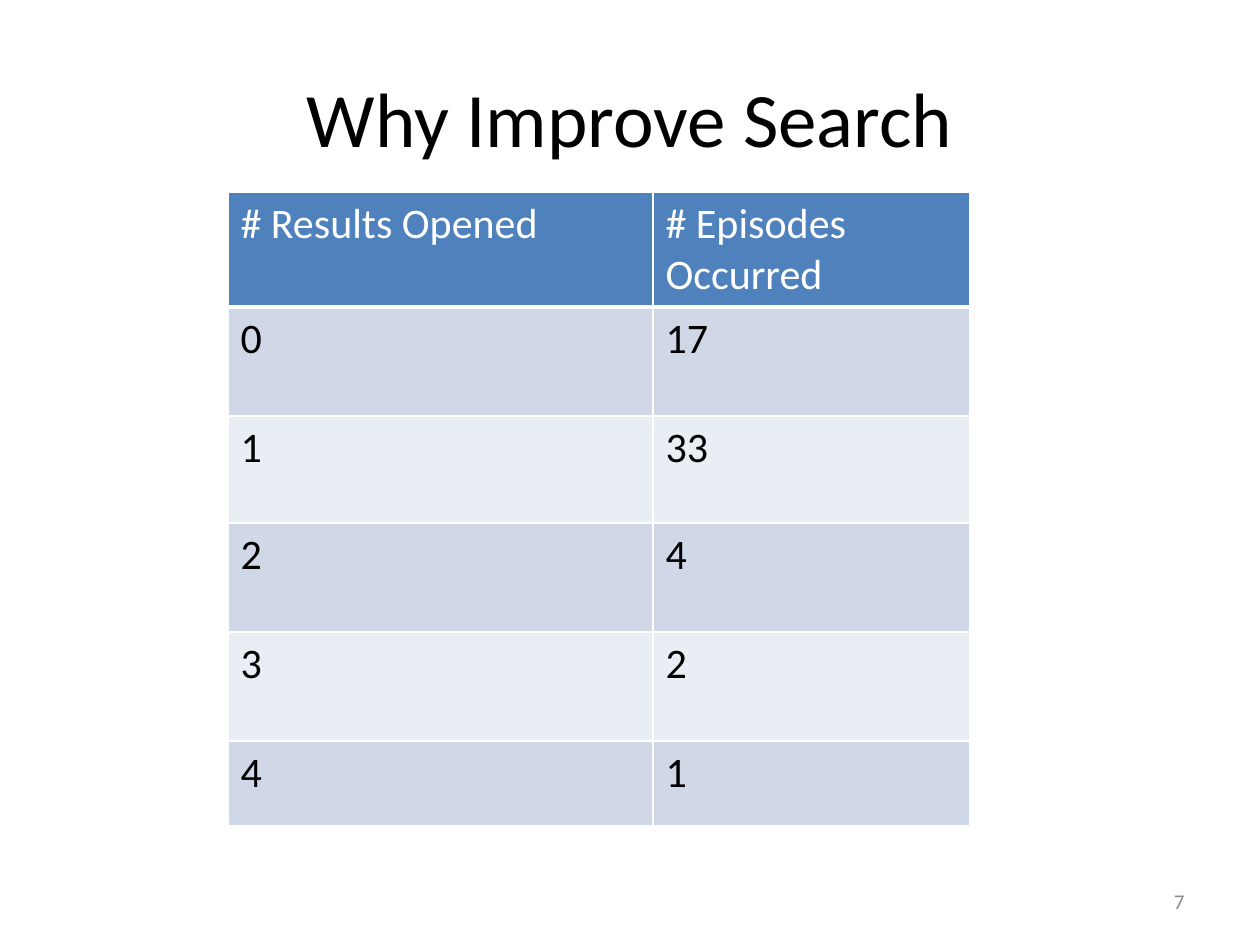
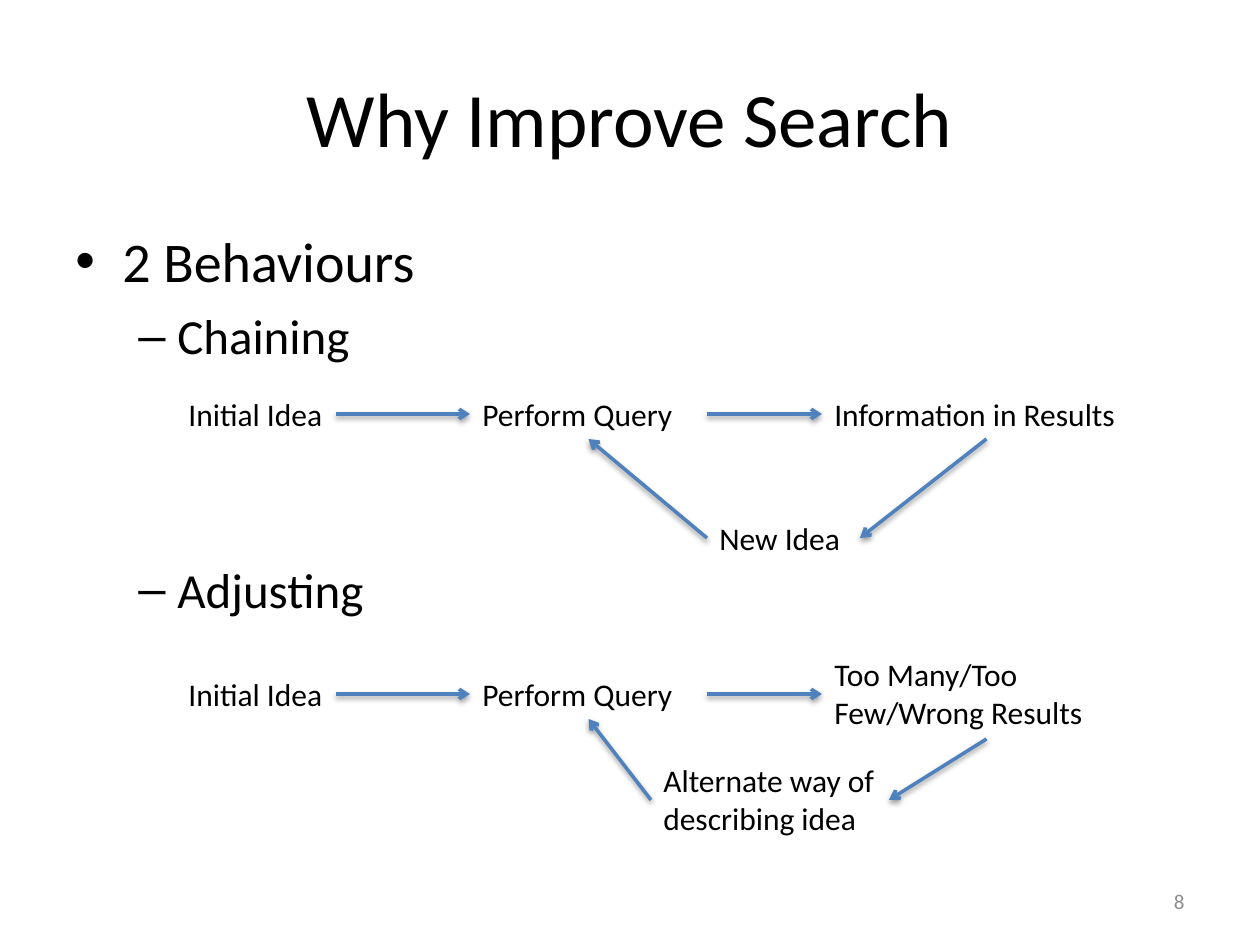
from lxml.etree import SubElement
from pptx import Presentation
from pptx.dml.color import RGBColor
from pptx.enum.shapes import MSO_CONNECTOR
from pptx.enum.text import MSO_ANCHOR, PP_ALIGN
from pptx.oxml.ns import qn
from pptx.util import Emu, Pt

FONT = "Calibri"
COLORS = {"text": "000000", "accent": "4F81BD", "white": "FFFFFF",
          "number": "8C8C8C", "dark_band": "D0D8E8", "light_band": "E9EDF4"}
TITLE_BOX = (63, 38, 1134, 157)
NUMBER_BOX = (903, 876, 294, 50)
TOP, LEFT, BOTTOM, RIGHT = range(4)
EPISODES = [("# Results Opened", "# Episodes Occurred"),
            ("0", "17"), ("1", "33"), ("2", "4"), ("3", "2"), ("4", "1")]


def px(n):
    """Turn pixels at 126 to the inch into EMU."""
    return Emu(round(n * 914400 / 126))


def rgb(name):
    """Look up a palette colour."""
    return RGBColor.from_string(COLORS[name])


def add_run(p, text, size, color="text"):
    """Add one styled run to a paragraph."""
    r = p.add_run()
    r.text = text
    r.font.name, r.font.size = FONT, Pt(size)
    r.font.color.rgb = rgb(color)


def add_box(s, box, anchor=MSO_ANCHOR.TOP):
    """Add an empty wrapping text box."""
    sp = s.shapes.add_textbox(*map(px, box))
    sp.text_frame.word_wrap = True
    sp.text_frame.vertical_anchor = anchor
    return sp


def add_line(s, box, text, size, color="text", align=PP_ALIGN.LEFT,
             anchor=MSO_ANCHOR.TOP):
    """Add a text box holding one paragraph."""
    sp = add_box(s, box, anchor)
    p = sp.text_frame.paragraphs[0]
    p.alignment = align
    add_run(p, text, size, color)
    return sp


def new_slide(prs, title, number):
    """Add a slide with the shared title and page number."""
    s = prs.slides.add_slide(prs.slide_layouts[6])
    add_line(s, TITLE_BOX, title, 44, align=PP_ALIGN.CENTER,
             anchor=MSO_ANCHOR.MIDDLE)
    add_line(s, NUMBER_BOX, str(number), 12, "number", PP_ALIGN.RIGHT,
             MSO_ANCHOR.MIDDLE)
    return s


def style_cell(cell, text, row):
    """Fill a table cell, with white borders around it."""
    header = row == 0
    tc_pr = cell._tc.get_or_add_tcPr()
    for side in "LRTB":
        heavy = (header and side == "B") or (row == 1 and side == "T")
        ln = SubElement(tc_pr, qn(f"a:ln{side}"), w=str(Pt(3 if heavy else 1)))
        fill = SubElement(ln, qn("a:solidFill"))
        SubElement(fill, qn("a:srgbClr"), val=COLORS["white"])
    band = "accent" if header else "dark_band" if row % 2 else "light_band"
    cell.fill.solid()
    cell.fill.fore_color.rgb = rgb(band)
    add_run(cell.text_frame.paragraphs[0], text, 24,
            "white" if header else "text")


def episode_table(s, x, y, widths, heights):
    """Draw the table of results opened per episode."""
    frame = s.shapes.add_table(len(heights), len(widths), px(x), px(y),
                               px(sum(widths)), px(sum(heights)))
    table = frame.table
    for column, w in zip(table.columns, widths):
        column.width = px(w)
    for i, (row, h, texts) in enumerate(zip(table.rows, heights, EPISODES)):
        row.height = px(h)
        for cell, text in zip(row.cells, texts):
            style_cell(cell, text, i)


def behaviour_list(s, box):
    """Write the bulleted list, leaving room for the first flow."""
    tf = add_box(s, box).text_frame
    items = [("2 Behaviours", 32, "•", 0, 47, 47, 8),
             ("Chaining", 28, "–", 1, 102, 39, 7),
             ("Adjusting", 28, "–", 1, 102, 39, 111.5)]
    for i, (text, size, bullet, level, margin, hang, before) in enumerate(items):
        p = tf.add_paragraph() if i else tf.paragraphs[0]
        p.level, p.space_before = level, Pt(before)
        p_pr = p._p.get_or_add_pPr()
        p_pr.set("marL", str(px(margin)))
        p_pr.set("indent", str(px(-hang)))
        SubElement(p_pr, qn("a:buFont"), typeface="Arial")
        SubElement(p_pr, qn("a:buChar"), char=bullet)
        add_run(p, text, size)


def add_arrow(s, start, start_side, end, end_side):
    """Join two steps with a softly shadowed arrow."""
    c = s.shapes.add_connector(MSO_CONNECTOR.STRAIGHT, 0, 0, 0, 0)
    c.begin_connect(start, start_side)
    c.end_connect(end, end_side)
    c.line.color.rgb = rgb("accent")
    c.line.width = Pt(2)
    sp_pr = c._element.spPr
    SubElement(sp_pr.find(qn("a:ln")), qn("a:tailEnd"), type="arrow")
    effects = SubElement(sp_pr, qn("a:effectLst"))
    shadow = SubElement(effects, qn("a:outerShdw"), blurRad="40000",
                        dist="20000", dir="5400000", rotWithShape="0")
    color = SubElement(shadow, qn("a:srgbClr"), val=COLORS["text"])
    SubElement(color, qn("a:alpha"), val="38000")


def search_flow(s, x, y, outcome, outcome_h, retry, retry_box):
    """Draw a query loop whose first row is centred on y."""
    def step(text, dx, w, h=50):
        return add_line(s, (x + dx, y - h // 2, w, h), text, 18)

    idea = step("Initial Idea", 0, 160)
    query = step("Perform Query", 294, 237)
    result = step(outcome, 646, 329, outcome_h)
    dx, dy, w, h = retry_box
    again = add_line(s, (x + dx, y + dy, w, h), retry, 18)
    add_arrow(s, idea, RIGHT, query, LEFT)
    add_arrow(s, query, RIGHT, result, LEFT)
    add_arrow(s, result, BOTTOM, again, RIGHT)
    add_arrow(s, again, LEFT, query, BOTTOM)


def main():
    """Build both slides and save them."""
    prs = Presentation()
    prs.slide_width, prs.slide_height = px(1260), px(945)
    title = "Why Improve Search"
    s = new_slide(prs, title, 7)
    episode_table(s, 228, 192, (425, 317), (115, 109, 107, 109, 109, 85))
    s = new_slide(prs, title, 8)
    behaviour_list(s, (63, 220, 1134, 624))
    search_flow(s, 176, 414, "Information in Results", 50,
                "New Idea", (531, 99, 153, 50))
    search_flow(s, 176, 694, "Too Many/Too Few/Wrong Results", 90,
                "Alternate way of describing idea", (475, 61, 238, 90))
    prs.save("out.pptx")


if __name__ == "__main__":
    main()
